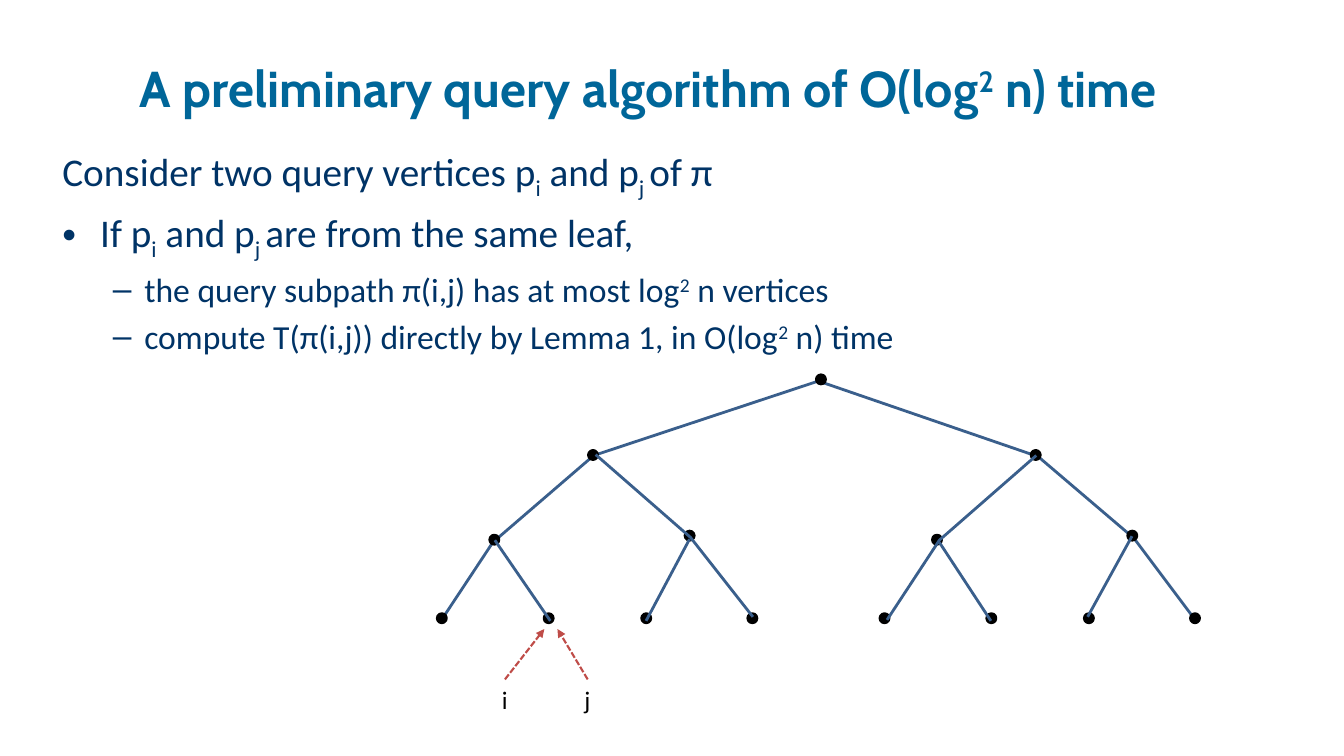
from lxml.etree import SubElement
from pptx import Presentation
from pptx.dml.color import RGBColor
from pptx.enum.dml import MSO_LINE_DASH_STYLE as Dash
from pptx.enum.shapes import MSO_CONNECTOR as Connector, MSO_SHAPE as Shape
from pptx.enum.text import MSO_ANCHOR as Anchor, MSO_AUTO_SIZE as AutoSize, PP_ALIGN as Align
from pptx.oxml.ns import qn
from pptx.util import Pt

SUB, SUPER = -25, 30
TITLE = [("A preliminary query algorithm of O(log", 0), ("2", SUPER), (" n) time", 0)]
BODY = [
    (0, False, [("Consider two query vertices p", 0), ("i", SUB), (" and p", 0),
                ("j ", SUB), ("of π", 0)]),
    (0, True, [("If p", 0), ("i", SUB), (" and p", 0), ("j ", SUB),
               ("are from the same leaf,", 0)]),
    (1, True, [("the query subpath π(i,j) has at most log", 0), ("2", SUPER),
               (" n vertices", 0)]),
    (1, True, [("compute T(π(i,j)) directly by Lemma 1, in O(log", 0), ("2", SUPER),
               (" n) time", 0)]),
]
ROOT = (586.4, 271)
SUBTREE_TOPS = [(423.6, 325), (739.8, 325)]
SUBTREE_OFFSETS = [(0, 0), (-70.5, 60.5), (69, 57.6),
                   (-108, 116.6), (-31.7, 116.6), (38, 116.6), (113.8, 116.6)]
OUTER_BRANCH = [(315.4, 442.8), (352.1, 387.4), (424.1, 325.4), (584.6, 272.2),
                (741.6, 326.2), (810, 384.5), (853.2, 442.1)]
INNER_BRANCHES = [
    [(537.8, 440.6), (493.2, 383.8), (425.5, 324.7)],
    [(633.6, 442.8), (671, 385.9), (740.2, 325.4)],
]
LEAF_EDGES = [((492.5, 385.2), (461.5, 443.5)), ((353.5, 385.9), (393.1, 443.5)),
              ((671, 387.4), (707.8, 443.5)), ((776.9, 440.6), (808.6, 383))]
QUERY_POINTERS = [("i", 351.4, (360.7, 485.3), (388.8, 449.3)),
                  ("j", 410.4, (419.8, 485.3), (398.2, 449.3))]
LABEL_TOP, LABEL_WIDTH, LABEL_HEIGHT = 485.3, 18.7, 28.8
NODE_SIZE = 6.5

THEME = {
    "title_font": "Cabin", "body_font": "Calibri",
    "title": RGBColor(0x00, 0x66, 0x99), "body": RGBColor(0x00, 0x33, 0x66),
    "node": RGBColor(0, 0, 0), "edge": RGBColor(0x3A, 0x5F, 0x8C),
    "pointer": RGBColor(0xBF, 0x4C, 0x48),
    "title_size": 36, "body_sizes": (28, 24), "label_size": 18,
    "line": 2, "pointer_line": 1.5,
}


def place(shape, left, top, width, height):
    shape.left, shape.top = Pt(left), Pt(top)
    shape.width, shape.height = Pt(width), Pt(height)


def style_font(paragraph, name, size, color, bold=False):
    font = paragraph.font
    font.name, font.size, font.bold = name, Pt(size), bold
    font.color.rgb = color


def add_runs(paragraph, runs):
    for text, baseline in runs:
        run = paragraph.add_run()
        run.text = text
        if baseline:
            run._r.get_or_add_rPr().set("baseline", str(baseline * 1000))


def style_line(line, color, width):
    line.color.rgb = color
    line.width = Pt(width)


def add_title(slide):
    title = slide.shapes.title
    place(title, 31, 17.3, 864, 90)
    frame = title.text_frame
    frame.vertical_anchor = Anchor.MIDDLE
    paragraph = frame.paragraphs[0]
    paragraph.alignment = Align.CENTER
    style_font(paragraph, THEME["title_font"], THEME["title_size"], THEME["title"], True)
    add_runs(paragraph, TITLE)


def add_body(slide):
    body = slide.placeholders[1]
    place(body, 37.4, 101.5, 922.6, 263.5)
    frame = body.text_frame
    frame.auto_size = AutoSize.NONE
    for index, (level, bulleted, runs) in enumerate(BODY):
        paragraph = frame.add_paragraph() if index else frame.paragraphs[0]
        paragraph.level = level
        if not bulleted:
            properties = paragraph._p.get_or_add_pPr()
            properties.set("marL", "0")
            properties.set("indent", "0")
            SubElement(properties, qn("a:buNone"))
        style_font(paragraph, THEME["body_font"], THEME["body_sizes"][level], THEME["body"])
        add_runs(paragraph, runs)


def add_branch(slide, points):
    start, *rest = [(Pt(x), Pt(y)) for x, y in points]
    builder = slide.shapes.build_freeform(*start)
    builder.add_line_segments(rest, close=False)
    branch = builder.convert_to_shape()
    branch.shadow.inherit = False
    branch.fill.background()
    style_line(branch.line, THEME["edge"], THEME["line"])


def add_node(slide, x, y):
    corner = Pt(x - NODE_SIZE / 2), Pt(y - NODE_SIZE / 2)
    node = slide.shapes.add_shape(Shape.OVAL, *corner, Pt(NODE_SIZE), Pt(NODE_SIZE))
    node.shadow.inherit = False
    node.fill.solid()
    node.fill.fore_color.rgb = THEME["node"]
    style_line(node.line, THEME["node"], THEME["line"])


def add_segment(slide, start, end, color, width):
    ends = [Pt(value) for value in (*start, *end)]
    segment = slide.shapes.add_connector(Connector.STRAIGHT, *ends)
    style_line(segment.line, color, width)
    SubElement(segment._element.spPr, qn("a:effectLst"))
    return segment


def add_pointer(slide, name, left, start, end):
    label = slide.shapes.add_textbox(Pt(left), Pt(LABEL_TOP), Pt(LABEL_WIDTH), Pt(LABEL_HEIGHT))
    label.text_frame.word_wrap = False
    label.text_frame.auto_size = AutoSize.SHAPE_TO_FIT_TEXT
    paragraph = label.text_frame.paragraphs[0]
    style_font(paragraph, THEME["body_font"], THEME["label_size"], THEME["node"])
    add_runs(paragraph, [(name, 0)])
    arrow = add_segment(slide, start, end, THEME["pointer"], THEME["pointer_line"])
    arrow.line.dash_style = Dash.SQUARE_DOT
    SubElement(arrow.line._get_or_add_ln(), qn("a:tailEnd"), type="triangle")


def main():
    presentation = Presentation()
    presentation.slide_width, presentation.slide_height = Pt(960), Pt(540)
    slide = presentation.slides.add_slide(presentation.slide_layouts[1])
    add_title(slide)
    add_body(slide)
    add_branch(slide, OUTER_BRANCH)
    add_node(slide, *ROOT)
    for top_x, top_y in SUBTREE_TOPS:
        for dx, dy in SUBTREE_OFFSETS:
            add_node(slide, top_x + dx, top_y + dy)
    for points in INNER_BRANCHES:
        add_branch(slide, points)
    for start, end in LEAF_EDGES:
        add_segment(slide, start, end, THEME["edge"], THEME["line"])
    for pointer in QUERY_POINTERS:
        add_pointer(slide, *pointer)
    presentation.save("out.pptx")


if __name__ == "__main__":
    main()
